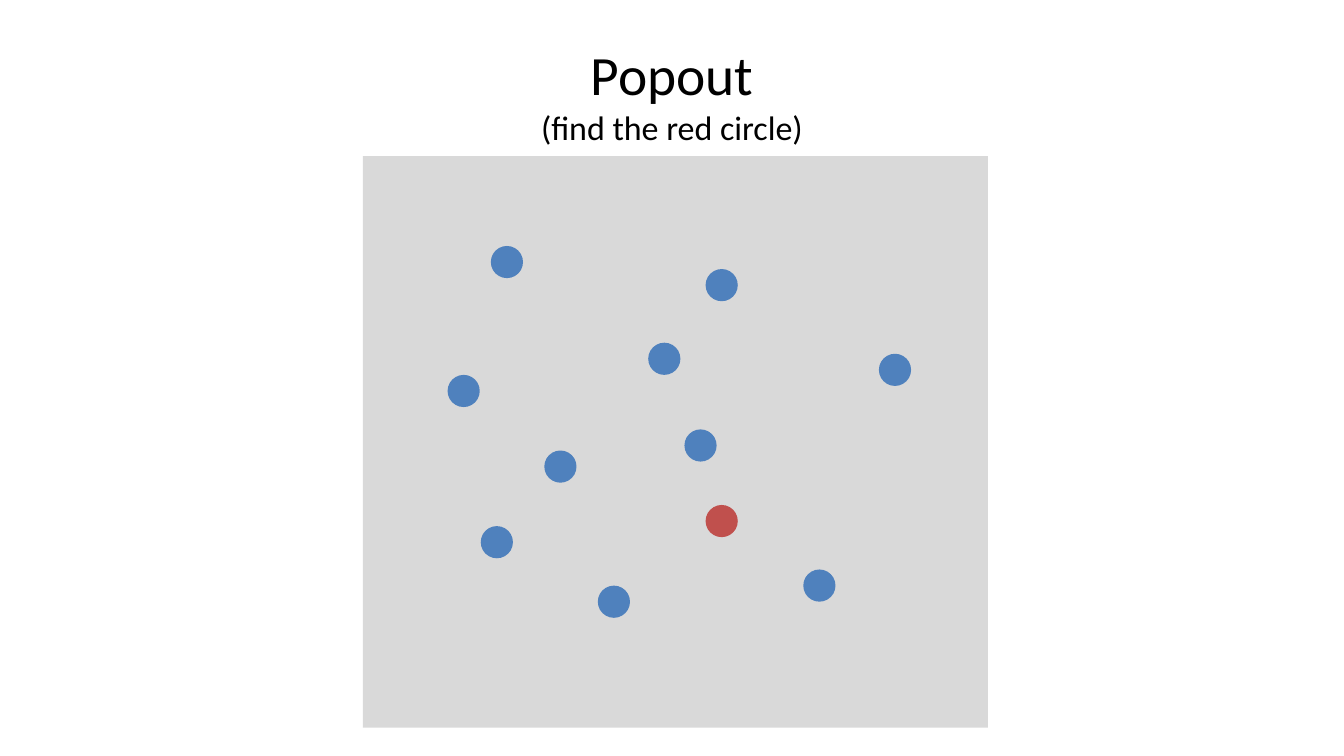
from pptx import Presentation
from pptx.dml.color import RGBColor
from pptx.enum.shapes import MSO_SHAPE as Preset
from pptx.enum.text import MSO_ANCHOR as Anchor, PP_ALIGN as Align
from pptx.util import Pt

COLORS = {"panel": "D9D9D9", "distractor": "4F81BD", "target": "C0504D", "text": "000000"}
FONT = "Calibri"
SLIDE_SIZE = (960, 540)
TITLE_BOX = (48, 21.6, 864, 90)
PANEL_BOX = (259.2, 111.6, 446.4, 408.2)
DIAMETER = 23

TITLE_LINES = [("Popout", 39.6), ("(find the red circle)", 24.3)]

# Left and top of each circle
DISTRACTORS = [
    (350.6, 175.7), (463, 244.8), (343.4, 375.8), (388.8, 321.8), (504, 192.2),
    (488.9, 306.7), (319.7, 267.8), (573.8, 406.8), (627.8, 252.7), (427, 418.3),
]
TARGET = (504, 360.7)


def add_filled(shapes, preset, box, color):
    shape = shapes.add_shape(preset, *map(Pt, box))
    shape.shadow.inherit = False
    shape.fill.solid()
    shape.fill.fore_color.rgb = RGBColor.from_string(COLORS[color])
    shape.line.fill.background()


def add_title(slide):
    frame = slide.shapes.add_textbox(*map(Pt, TITLE_BOX)).text_frame
    frame.word_wrap = True
    frame.vertical_anchor = Anchor.MIDDLE
    paragraph = frame.paragraphs[0]
    paragraph.alignment = Align.CENTER
    for index, (text, size) in enumerate(TITLE_LINES):
        if index:
            paragraph.add_line_break()
        run = paragraph.add_run()
        run.text = text
        for name, value in {"name": FONT, "size": Pt(size)}.items():
            setattr(run.font, name, value)
        run.font.color.rgb = RGBColor.from_string(COLORS["text"])


def main():
    presentation = Presentation()
    presentation.slide_width, presentation.slide_height = map(Pt, SLIDE_SIZE)
    slide = presentation.slides.add_slide(presentation.slide_layouts[6])

    add_filled(slide.shapes, Preset.RECTANGLE, PANEL_BOX, "panel")
    add_title(slide)

    circles = slide.shapes.add_group_shape().shapes
    for position in DISTRACTORS + [TARGET]:
        color = "target" if position == TARGET else "distractor"
        add_filled(circles, Preset.OVAL, (*position, DIAMETER, DIAMETER), color)

    presentation.save("out.pptx")


if __name__ == "__main__":
    main()
